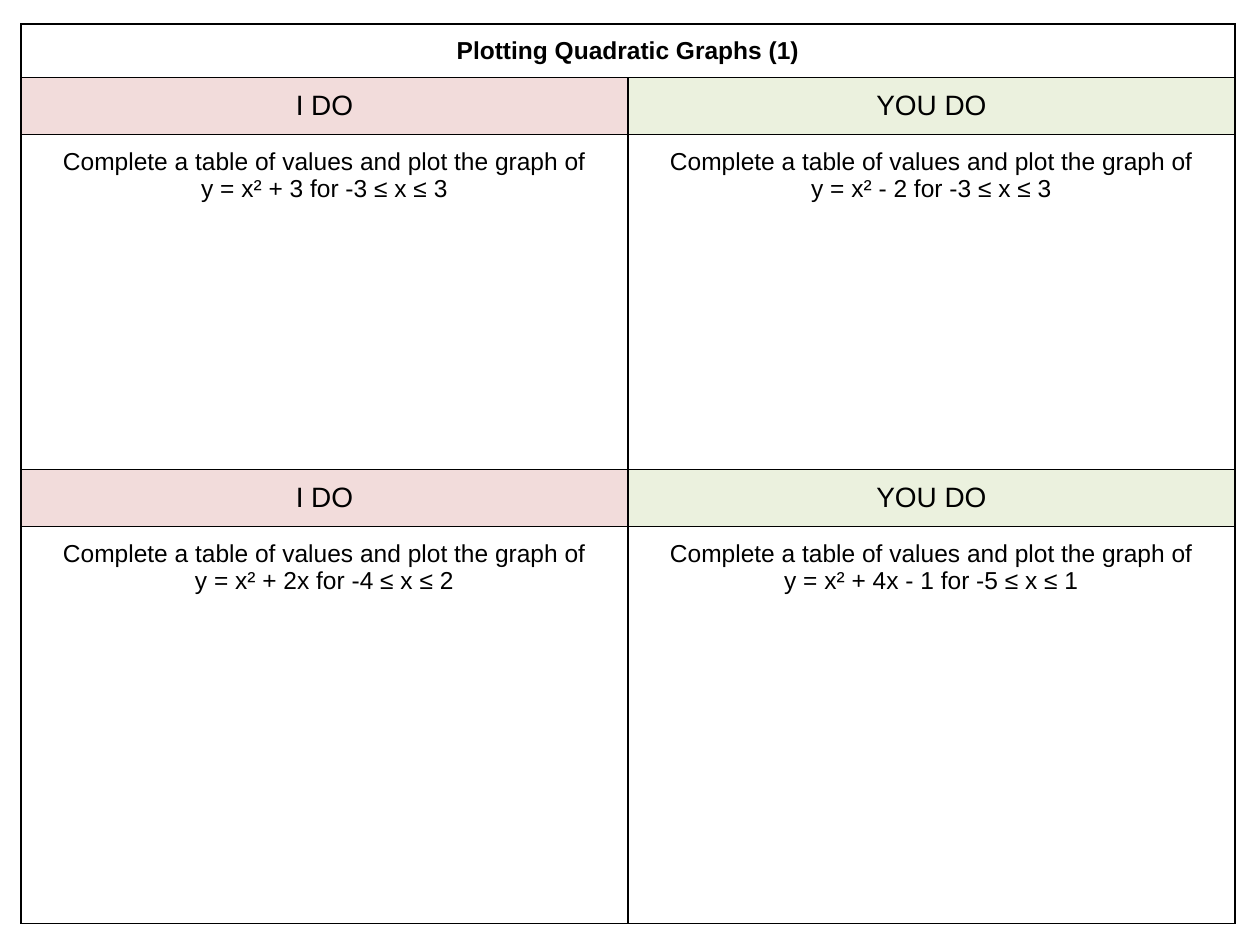
from lxml.etree import SubElement
from pptx import Presentation
from pptx.dml.color import RGBColor
from pptx.enum.text import PP_ALIGN
from pptx.oxml.ns import qn
from pptx.util import Pt

# Content
TITLE = "Plotting Quadratic Graphs (1)"
HEADINGS = ("I DO", "YOU DO")
TASK = "Complete a table of values and plot the graph of"
EQUATIONS = [
    ("y = x² + 3 for -3 ≤ x ≤ 3", "y = x² - 2 for -3 ≤ x ≤ 3"),
    ("y = x² + 2x for -4 ≤ x ≤ 2", "y = x² + 4x - 1 for -5 ≤ x ≤ 1"),
]

THEME = {
    "font": "Arial", "text": "000000", "border": "000000",
    "headings": ("F2DCDB", "EBF1DE"),
    "body_size": 14, "heading_size": 16, "border_width": 0.75,
}

# Layout in px
PX = 914400 // 126
SLIDE_W, SLIDE_H = 1260, 945
LEFT, TOP, COL_W, MARGIN = 21, 24, 607, 13
ROW_HEIGHTS = (53, 56, 335, 56, 397)


def add_borders(cell):
    tc_pr = cell._tc.get_or_add_tcPr()
    for side in ("lnL", "lnR", "lnT", "lnB"):
        ln = SubElement(tc_pr, qn(f"a:{side}"), w=str(Pt(THEME["border_width"])))
        fill = SubElement(ln, qn("a:solidFill"))
        SubElement(fill, qn("a:srgbClr"), val=THEME["border"])


def fill_cell(cell, text, size, bold=False, color=None):
    cell.margin_left = cell.margin_right = MARGIN * PX
    cell.margin_top = cell.margin_bottom = MARGIN * PX
    if color:
        cell.fill.solid()
        cell.fill.fore_color.rgb = RGBColor.from_string(color)
    else:
        cell.fill.background()
    cell.text_frame.text = text
    for p in cell.text_frame.paragraphs:
        p.alignment = PP_ALIGN.CENTER
        for r in p.runs:
            r.font.name = THEME["font"]
            r.font.size = Pt(size)
            r.font.bold = bold
            r.font.color.rgb = RGBColor.from_string(THEME["text"])


prs = Presentation()
prs.slide_width, prs.slide_height = SLIDE_W * PX, SLIDE_H * PX
s = prs.slides.add_slide(prs.slide_layouts[6])

# Table grid
table = s.shapes.add_table(
    len(ROW_HEIGHTS), len(HEADINGS), LEFT * PX, TOP * PX,
    COL_W * len(HEADINGS) * PX, sum(ROW_HEIGHTS) * PX).table
table.first_row = table.horz_banding = False
for col in table.columns:
    col.width = COL_W * PX
for row, height in zip(table.rows, ROW_HEIGHTS):
    row.height = height * PX
for cell in table.iter_cells():
    add_borders(cell)

# Title row
table.cell(0, 0).merge(table.cell(0, 1))
fill_cell(table.cell(0, 0), TITLE, THEME["body_size"], bold=True)

# Pairs of heading and task rows
for i, equations in enumerate(EQUATIONS):
    top = 1 + 2 * i
    for c, equation in enumerate(equations):
        fill_cell(table.cell(top, c), HEADINGS[c], THEME["heading_size"],
                  color=THEME["headings"][c])
        fill_cell(table.cell(top + 1, c), f"{TASK}\n{equation}", THEME["body_size"])

prs.save("out.pptx")
